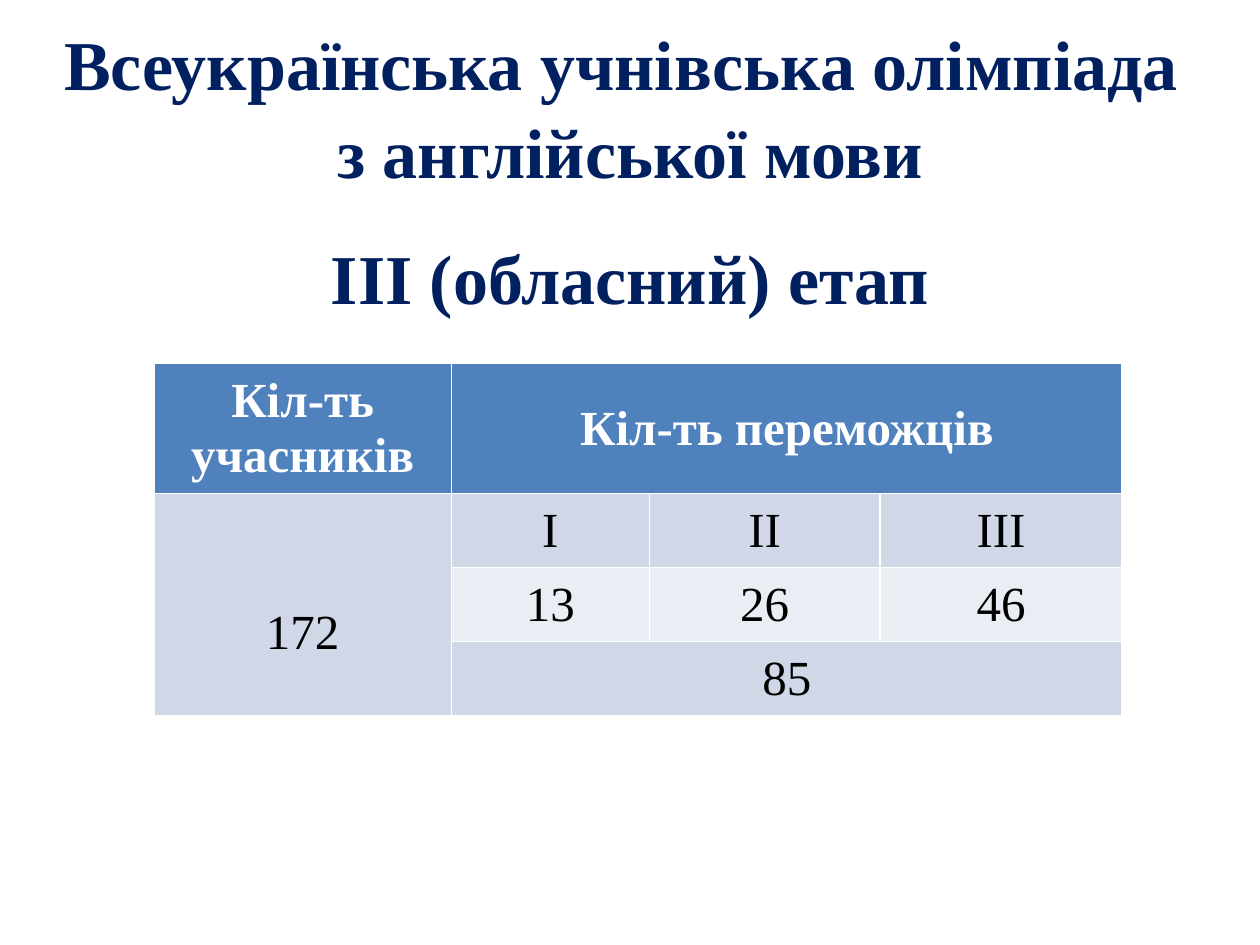
from dataclasses import dataclass

from pptx import Presentation
from pptx.dml.color import RGBColor as RGB
from pptx.enum.text import MSO_ANCHOR as ANCHOR, PP_ALIGN as ALIGN
from pptx.util import Cm, Pt


@dataclass(frozen=True)
class Theme:
    font: str = "Times New Roman"
    navy: str = "002060"
    white: str = "FFFFFF"
    black: str = "000000"
    header: str = "4F81BD"
    band: str = "D0D8E8"
    light: str = "E9EDF4"
    title_size: int = 40
    cell_size: int = 28


@dataclass(frozen=True)
class Heading:
    text: str
    left: float
    top: float
    width: float
    height: float
    inset: float
    anchor: ANCHOR


@dataclass(frozen=True)
class Entry:
    text: str
    row: int
    col: int
    fill: str
    rows: int = 1
    cols: int = 1
    header: bool = False
    inset: float = 0.13


T = Theme()

HEADINGS = [
    Heading("Всеукраїнська учнівська олімпіада \vз англійської мови",
            0, 0, 25.4, 3.99, 0.33, ANCHOR.MIDDLE),
    Heading("ІІІ (обласний) етап", 1.27, 4.45, 22.86, 12.57, 0.28, ANCHOR.TOP),
]

COLUMNS = [6, 3.99, 4.65, 4.88]
ROWS = [2.39, 1.49, 1.49, 1.49]
ENTRIES = [
    Entry("Кіл-ть учасників", 0, 0, T.header, header=True),
    Entry("Кіл-ть переможців", 0, 1, T.header, cols=3, header=True),
    Entry("172", 1, 0, T.band, rows=3, inset=1.27),
    *(Entry(place, 1, c, T.band) for c, place in enumerate(["І", "ІІ", "ІІІ"], 1)),
    *(Entry(count, 2, c, T.light) for c, count in enumerate(["13", "26", "46"], 1)),
    Entry("85", 3, 1, T.band, cols=3),
]


def write(tf, text: str, *, size: int, color: str, bold: bool = False,
          line_spacing: float = 1.0) -> None:
    p = tf.paragraphs[0]
    p.text = text
    p.alignment = ALIGN.CENTER
    p.line_spacing = line_spacing
    for r in p.runs:
        r.font.name = T.font
        r.font.size = Pt(size)
        r.font.bold = bold
        r.font.color.rgb = RGB.from_string(color)


def draw_heading(s, h: Heading) -> None:
    sp = s.shapes.add_textbox(Cm(h.left), Cm(h.top), Cm(h.width), Cm(h.height))
    tf = sp.text_frame
    tf.word_wrap = True
    tf.vertical_anchor = h.anchor
    tf.margin_top = Cm(h.inset)
    spacing = 1.05 if "\v" in h.text else 1.0
    write(tf, h.text, size=T.title_size, color=T.navy, bold=True, line_spacing=spacing)


def draw_entry(table, e: Entry) -> None:
    cell = table.cell(e.row, e.col)
    last = table.cell(e.row + e.rows - 1, e.col + e.cols - 1)
    if cell is not last and (e.rows > 1 or e.cols > 1):
        cell.merge(last)
    for r in range(e.row, e.row + e.rows):
        for c in range(e.col, e.col + e.cols):
            fill = table.cell(r, c).fill
            fill.solid()
            fill.fore_color.rgb = RGB.from_string(e.fill)
    cell.vertical_anchor = ANCHOR.MIDDLE
    cell.margin_top = Cm(e.inset)
    write(cell.text_frame, e.text, size=T.cell_size, bold=e.header,
          color=T.white if e.header else T.black)


def draw_table(s) -> None:
    table = s.shapes.add_table(len(ROWS), len(COLUMNS), Cm(3.1), Cm(7.32),
                               Cm(sum(COLUMNS)), Cm(sum(ROWS))).table
    for column, width in zip(table.columns, COLUMNS):
        column.width = Cm(width)
    for row, height in zip(table.rows, ROWS):
        row.height = Cm(height)
    for e in ENTRIES:
        draw_entry(table, e)


def main() -> None:
    prs = Presentation()
    prs.slide_width, prs.slide_height = Cm(25.4), Cm(19.05)
    s = prs.slides.add_slide(prs.slide_layouts[6])
    for h in HEADINGS:
        draw_heading(s, h)
    draw_table(s)
    prs.save("out.pptx")


if __name__ == "__main__":
    main()
